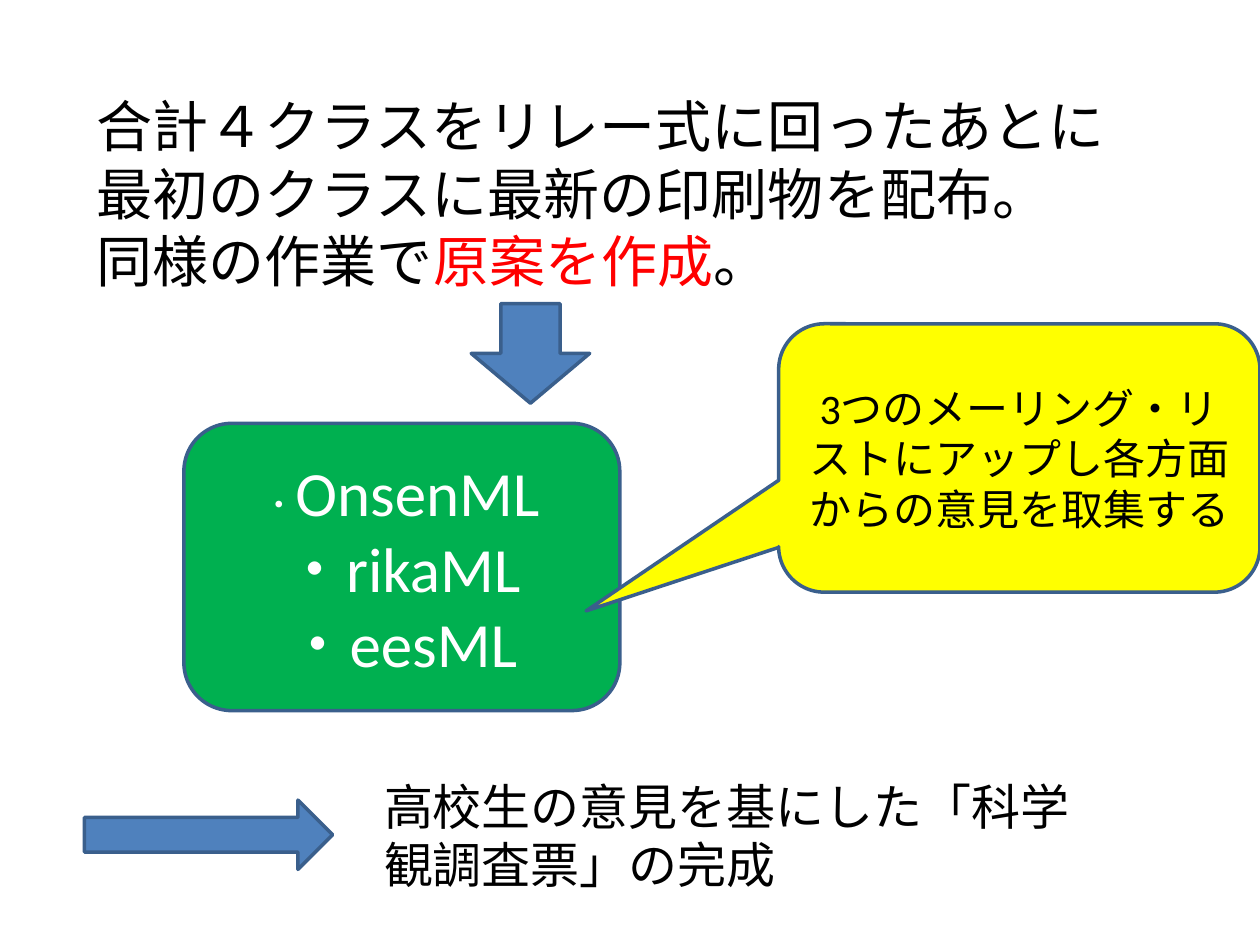
from pptx import Presentation
from pptx.dml.color import RGBColor
from pptx.enum.shapes import MSO_SHAPE as Shape
from pptx.enum.text import MSO_ANCHOR as Anchor, PP_ALIGN as Align
from pptx.util import Inches, Pt

COLORS = {
    "blue": "4F81BD", "outline": "3A5F8C", "green": "00B050",
    "yellow": "FFFF00", "black": "000000", "red": "FF0000", "white": "FFFFFF",
}


def color(name):
    """Return the palette colour of this name."""
    return RGBColor.from_string(COLORS[name])


def write(frame, paragraphs, align=Align.LEFT, anchor=Anchor.TOP):
    """Fill a text frame with paragraphs of (text, size, colour) runs."""
    frame.word_wrap = True
    frame.vertical_anchor = anchor
    for index, runs in enumerate(paragraphs):
        paragraph = frame.paragraphs[0] if index == 0 else frame.add_paragraph()
        paragraph.alignment = align
        for text, size, ink in runs:
            run = paragraph.add_run()
            run.text = text
            for key, value in {"name": "Calibri", "size": Pt(size)}.items():
                setattr(run.font, key, value)
            run.font.color.rgb = color(ink)


def add_passage(slide, box, paragraphs):
    """Place left-aligned text in the box."""
    passage = slide.shapes.add_textbox(*map(Inches, box))
    write(passage.text_frame, paragraphs)


def add_figure(slide, box, preset, fill, paragraphs=(), adjustments=()):
    """Place an outlined preset shape with centred text in the box."""
    figure = slide.shapes.add_shape(preset, *map(Inches, box))
    figure.shadow.inherit = False
    figure.fill.solid()
    figure.fill.fore_color.rgb = color(fill)
    figure.line.color.rgb = color("outline")
    figure.line.width = Pt(2)
    for index, value in enumerate(adjustments):
        figure.adjustments[index] = value
    write(figure.text_frame, paragraphs, Align.CENTER, Anchor.MIDDLE)


def build_slide(slide):
    """Lay out the steps from draft to finished questionnaire."""
    add_passage(slide, (0.67, 0.68, 8.58, 2.26), [
        [("合計４クラスをリレー式に回ったあとに最初のクラスに最新の印刷物を配布。", 32, "black")],
        [("同様の作業で", 32, "black"), ("原案を作成", 32, "red"), ("。", 32, "black")],
    ])
    add_figure(slide, (3.74, 2.41, 0.94, 0.79), Shape.DOWN_ARROW, "blue")
    add_figure(slide, (1.46, 3.36, 3.46, 2.28), Shape.ROUNDED_RECTANGLE, "green", [
        [("・", 18, "white"), ("OnsenML", 36, "white")],
        [("・rikaML", 36, "white")],
        [("・eesML", 36, "white")],
    ])
    add_figure(slide, (6.18, 2.57, 3.82, 2.13), Shape.ROUNDED_RECTANGULAR_CALLOUT, "yellow",
               [[("3つのメーリング・リストにアップし各方面からの意見を取集する", 24, "black")]],
               (-0.9, 0.57, 0.17))
    add_figure(slide, (0.67, 6.35, 1.97, 0.55), Shape.RIGHT_ARROW, "blue")
    add_passage(slide, (2.95, 6.11, 5.67, 1.04),
                [[("高校生の意見を基にした「科学観調査票」の完成", 28, "black")]])


def main():
    """Build and save the presentation."""
    deck = Presentation()
    deck.slide_width, deck.slide_height = Inches(10), Inches(7.5)
    build_slide(deck.slides.add_slide(deck.slide_layouts[6]))
    deck.save("out.pptx")


if __name__ == "__main__":
    main()
